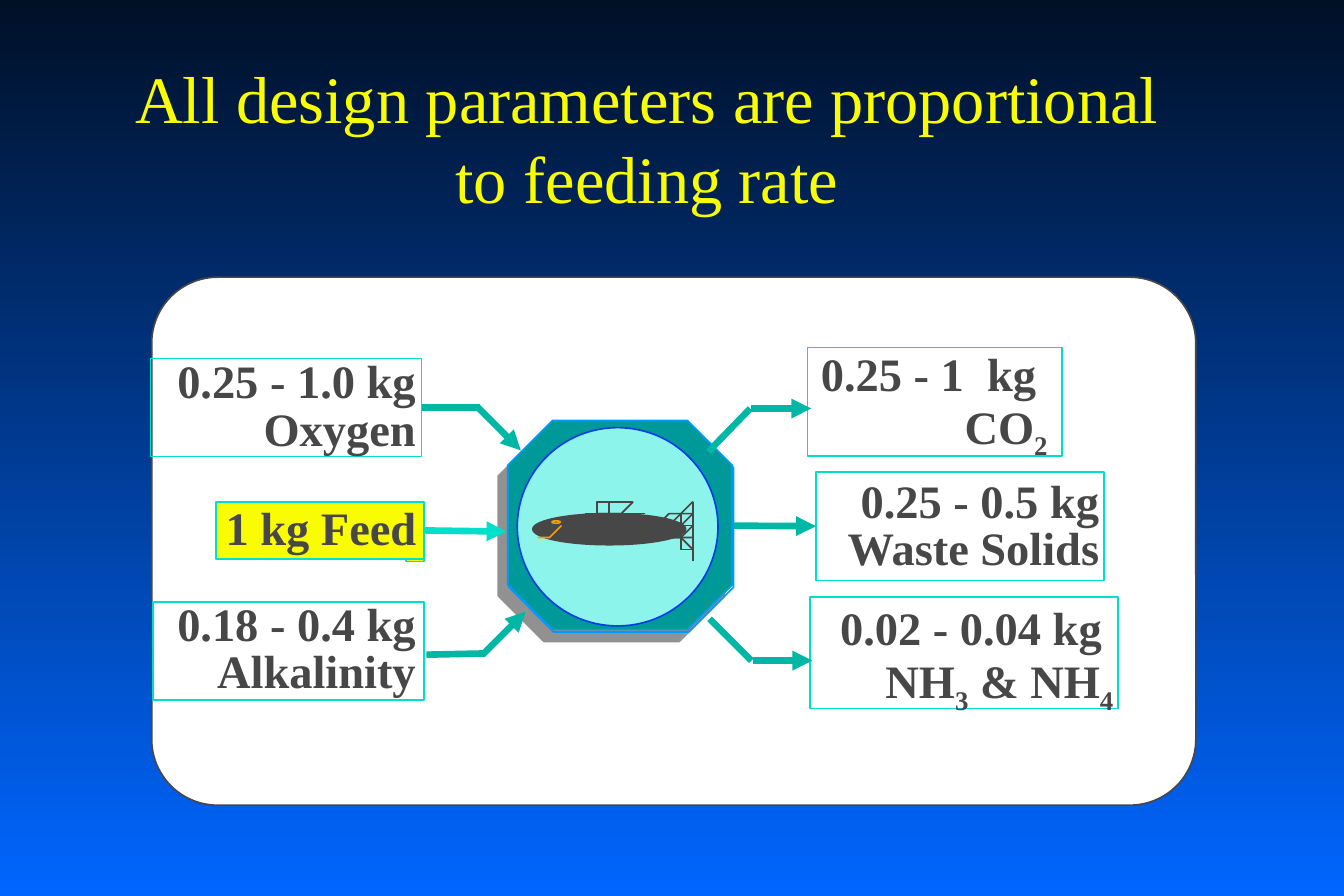
"""Build the slide that relates design parameters to the feeding rate."""
from math import cos, pi, sin

from lxml import etree
from pptx import Presentation
from pptx.dml.color import RGBColor
from pptx.enum.shapes import MSO_CONNECTOR, MSO_SHAPE
from pptx.enum.text import MSO_ANCHOR, MSO_AUTO_SIZE, PP_ALIGN
from pptx.oxml.ns import qn
from pptx.util import Inches, Pt

RECT, ROUNDED = MSO_SHAPE.RECTANGLE, MSO_SHAPE.ROUNDED_RECTANGLE
OCTAGON, OVAL = MSO_SHAPE.OCTAGON, MSO_SHAPE.OVAL
STRAIGHT = MSO_CONNECTOR.STRAIGHT
LEFT, CENTER, RIGHT = PP_ALIGN.LEFT, PP_ALIGN.CENTER, PP_ALIGN.RIGHT
COLORS = {
    "top": "001027", "bottom": "0066FF", "yellow": "FAFD00", "white": "FFFFFF",
    "dark": "474747", "grey": "919191", "blue": "0099FF", "teal": "009999",
    "pool": "8CF4EA", "ring": "063DE8", "orange": "FE9B03",
    "aqua": "00DFCA", "arrow": "00B7A5",
}
RGB = {name: RGBColor.from_string(code) for name, code in COLORS.items()}
FONT = "Times New Roman"

prs = Presentation()
prs.slide_width, prs.slide_height = Inches(11.25), Inches(7.5)
G = prs.slide_height // 75
s = prs.slides.add_slide(prs.slide_layouts[5])


def write(tf, text, size=28, color="dark", bold=True, align=RIGHT, spacing=0.85):
    """Fill a text frame; parts between underscores are subscripts."""
    for i, line in enumerate(text.split("\n")):
        p = tf.paragraphs[0] if i == 0 else tf.add_paragraph()
        p.alignment, p.line_spacing = align, spacing
        for j, part in enumerate(line.split("_")):
            if part:
                r = p.add_run()
                r.text = part
                r.font.name, r.font.size, r.font.bold = FONT, Pt(size), bold
                r.font.color.rgb = RGB[color]
                if j % 2:
                    r._r.get_or_add_rPr().set("baseline", "-25000")


def style(sp, line, fill=None):
    """Give a shape a thin outline and an optional fill."""
    sp.shadow.inherit = False
    sp.line.color.rgb, sp.line.width = RGB[line], Pt(1)
    if fill:
        sp.fill.solid()
        sp.fill.fore_color.rgb = RGB[fill]
    else:
        sp.fill.background()


bg = s.background.fill
bg.gradient()
bg.gradient_angle = 270
for stop, position, name in zip(bg.gradient_stops, (0, 1), ("top", "bottom")):
    stop.position, stop.color.rgb = position, RGB[name]

title = s.shapes.title
title.left, title.top, title.width, title.height = (
    round(v * G) for v in (9.9, 5.2, 88.5, 12.5))
title.text_frame.word_wrap = True
title.text_frame.auto_size = MSO_AUTO_SIZE.NONE
title.text_frame.vertical_anchor = MSO_ANCHOR.MIDDLE
write(title.text_frame, "All design parameters are proportional to feeding rate",
      size=40, color="yellow", bold=False, align=CENTER, spacing=1)

shapes = [
    (ROUNDED, 12.7, 23.2, 87.4, 44.2, "dark", "white", 0.125),
    (OCTAGON, 41.8, 36.2, 18.8, 17.5, "grey", None, 0.214),
    (OCTAGON, 41.7, 36.1, 18.8, 17.5, "grey", "grey", 0.214),
    (OCTAGON, 42.6, 35.4, 18.8, 17.5, "blue", None, 0.214),
    (OCTAGON, 42.5, 35.2, 18.8, 17.5, "blue", "teal", 0.214),
    (OVAL, 43.3, 35.8, 16.8, 16.6, "ring", "pool", None),
    (OVAL, 44.6, 43, 12.8, 2.6, "dark", "dark", None),
    (OVAL, 46.2, 43.6, 0.7, 0.2, "orange", None, None),
    (RECT, 34, 42.3, 1.5, 4.7, "aqua", "yellow", None),
]
for kind, x, y, w, h, line, fill, adj in shapes:
    sp = s.shapes.add_shape(kind, *(round(v * G) for v in (x, y, w, h)))
    style(sp, line, fill)
    if adj:
        sp.adjustments[0] = adj

tail = [
    (57.9, 42.5, 55.2, 44.1), (58, 42.7, 55.4, 44.1), (58.1, 42.9, 55.6, 44.3),
    (58.1, 43.3, 55.6, 44.4), (57.9, 42.3, 55.1, 43.9), (57.8, 42.1, 54.7, 43.8),
    (57.7, 41.9, 54.5, 43.6), (58, 43.6, 55.6, 44.6), (58.1, 43.8, 55.7, 44.8),
]
arcs = [(49.4 + 0.27 * i, 43.1 + 0.14 * i, 52.4 + 0.27 * i, 42.2 + 0.14 * i, "dark")
        for i in range(6)]
arcs += [(*arc, "dark") for arc in tail]
arcs += [(x1 + 0.15, 88.55 - y1, x2 + 0.15, 88.55 - y2, "dark")
         for x1, y1, x2, y2 in tail]
arcs += [(46.9, 44.3, 44.8, 44.7, "orange")]
for x1, y1, x2, y2, color in arcs:
    points = [(x2 + (x1 - x2) * cos(k * pi / 24), y1 + (y2 - y1) * sin(k * pi / 24))
              for k in range(13)]
    fb = s.shapes.build_freeform(*points[0], scale=G)
    fb.add_line_segments(points[1:], close=False)
    style(fb.convert_to_shape(), color)

labels = {
    "oxygen": ((12.6, 30, 22.7, 8.2), (14.1, 29.9, 21.4, 8.5), "0.25 - 1.0 kg\nOxygen"),
    "feed": ((18.1, 42, 17.4, 4.8), (17.9, 41.3, 18, 5.7), "1 kg Feed"),
    "alkalinity": ((12.8, 50.4, 22.7, 8.2), (14.1, 50.2, 21.4, 8.5),
                   "0.18 - 0.4 kg\nAlkalinity"),
    "co2": ((67.6, 29.1, 21.3, 9.1), (68, 29.3, 20.4, 8.5), "0.25 - 1  kg \nCO_2_"),
    "solids": ((68.3, 39.5, 24.1, 9.1), (69.1, 39.9, 23.6, 8.5),
               "0.25 - 0.5 kg\nWaste Solids"),
    "ammonia": ((67.8, 50, 25.8, 9.3), (69.6, 50.6, 24.3, 8.5),
                "0.02 - 0.04 kg \nNH_3_ & NH_4_"),
}
boxes = {}
for name, (frame, area, text) in labels.items():
    is_feed = name == "feed"
    boxes[name] = s.shapes.add_shape(RECT, *(round(v * G) for v in frame))
    style(boxes[name], "aqua", "yellow" if is_feed else None)
    tf = s.shapes.add_textbox(*(round(v * G) for v in area)).text_frame
    tf.word_wrap = name == "solids"
    if not is_feed:
        tf.margin_left = tf.margin_right = Inches(0.07)
        tf.margin_top = tf.margin_bottom = Inches(0.03)
    write(tf, text, align=LEFT if is_feed else RIGHT, spacing=1 if is_feed else 0.85)

flows = [
    (35.3, 34.1, 40.2, 34.1, "arrow", False, "oxygen", None),
    (40, 34.1, 43.6, 37.7, "arrow", True, None, None),
    (35.5, 44.4, 42.4, 44.5, "aqua", True, "feed", None),
    (35.7, 54.8, 40.6, 54.7, "arrow", False, None, None),
    (40.4, 54.8, 44, 51.2, "arrow", True, None, None),
    (59.3, 37.8, 62.8, 34.2, "arrow", False, None, None),
    (62.9, 34.2, 67.9, 34.2, "arrow", True, None, None),
    (61.4, 44, 68.3, 44, "arrow", True, None, "solids"),
    (59.4, 51.8, 62.9, 55.3, "arrow", False, None, None),
    (63, 55.3, 68, 55.3, "arrow", True, None, None),
]
for x1, y1, x2, y2, color, head, source, target in flows:
    c = s.shapes.add_connector(STRAIGHT, *(round(v * G) for v in (x1, y1, x2, y2)))
    if source:
        c.begin_connect(boxes[source], 3)
    if target:
        c.end_connect(boxes[target], 1)
    c.line.color.rgb, c.line.width = RGB[color], Pt(4)
    if head:
        etree.SubElement(c.line._get_or_add_ln(), qn("a:tailEnd"), type="triangle")
    etree.SubElement(c._element.spPr, qn("a:effectLst"))

prs.save("out.pptx")
